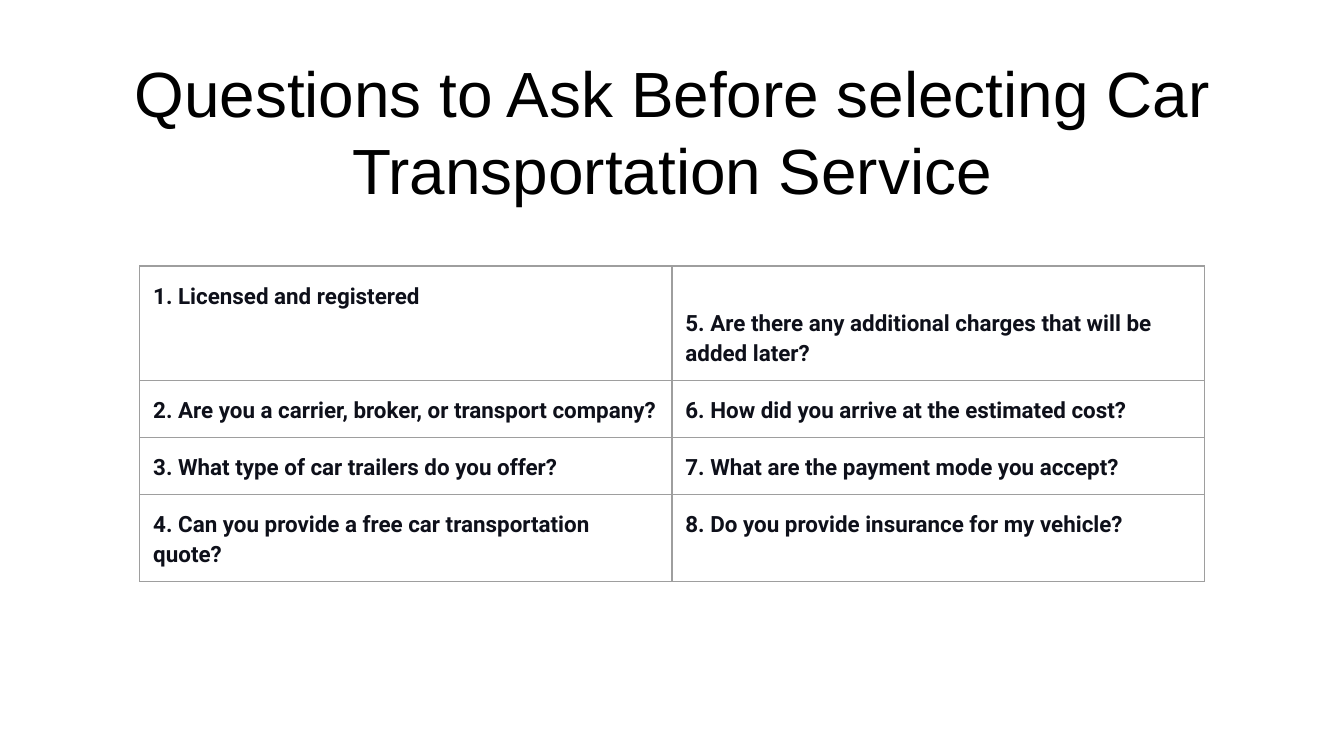
"""Build a slide listing questions to ask a car transportation service."""
from typing import NamedTuple

import lxml.etree
import pptx
import pptx.dml.color
import pptx.enum.text
import pptx.oxml.ns
import pptx.table
import pptx.text.text
import pptx.util

Inches = pptx.util.Inches
Pt = pptx.util.Pt
COLORS = {"title": "000000", "question": "0E101A", "border": "9E9E9E"}
INSET = Inches(0.1)


class QuestionRow(NamedTuple):
    height: float
    left: str
    right: str
    right_inset: float = 0.1


QUESTIONS = [
    QuestionRow(0.84, "1. Licensed and registered",
                "5. Are there any additional charges that will be added later?", 0.3),
    QuestionRow(0.42, "2. Are you a carrier, broker, or transport company?",
                "6. How did you arrive at the estimated cost?"),
    QuestionRow(0.42, "3. What type of car trailers do you offer?",
                "7. What are the payment mode you accept?"),
    QuestionRow(0.65, "4. Can you provide a free car transportation quote?",
                "8. Do you provide insurance for my vehicle?"),
]


def style_font(font: pptx.text.text.Font, name: str, size: float, color: str) -> None:
    font.name = name
    font.size = Pt(size)
    font.color.rgb = pptx.dml.color.RGBColor.from_string(COLORS[color])


def add_borders(cell: pptx.table._Cell) -> None:
    properties = cell._tc.get_or_add_tcPr()
    qn = pptx.oxml.ns.qn
    for position, side in enumerate(("a:lnL", "a:lnR", "a:lnT", "a:lnB")):
        border = lxml.etree.Element(qn(side), w=str(Pt(0.75)))
        fill = lxml.etree.SubElement(border, qn("a:solidFill"))
        lxml.etree.SubElement(fill, qn("a:srgbClr"), val=COLORS["border"])
        properties.insert(position, border)


def fill_question(cell: pptx.table._Cell, question: str, top_inset: float) -> None:
    cell.text = question
    cell.margin_left = cell.margin_right = cell.margin_bottom = INSET
    cell.margin_top = Inches(top_inset)
    cell.fill.background()
    paragraph = cell.text_frame.paragraphs[0]
    paragraph.line_spacing = 1.15
    paragraph.font.bold = True
    style_font(paragraph.font, "Roboto", 12, "question")
    add_borders(cell)


def main() -> None:
    presentation = pptx.Presentation()
    presentation.slide_width = Inches(10)
    presentation.slide_height = Inches(10 * 9 / 16)
    slide = presentation.slides.add_slide(presentation.slide_layouts[0])
    subtitle = slide.placeholders[1].element
    subtitle.getparent().remove(subtitle)

    title = slide.shapes.title
    title.left, title.top = Inches(0.34), Inches(0.81)
    title.width, title.height = Inches(9.32), Inches(0.83)
    frame = title.text_frame
    frame.text = "Questions to Ask Before selecting Car Transportation Service"
    frame.word_wrap = True
    frame.auto_size = pptx.enum.text.MSO_AUTO_SIZE.NONE
    frame.vertical_anchor = pptx.enum.text.MSO_ANCHOR.BOTTOM
    frame.margin_left = frame.margin_right = INSET
    frame.margin_top = frame.margin_bottom = INSET
    heading = frame.paragraphs[0]
    heading.alignment = pptx.enum.text.PP_ALIGN.CENTER
    heading.line_spacing = 1.0
    style_font(heading.font, "Arial", 34.2, "title")

    height = sum(row.height for row in QUESTIONS)
    table = slide.shapes.add_table(
        len(QUESTIONS), 2, Inches(1.04), Inches(1.98), Inches(7.92), Inches(height)
    ).table
    table.first_row = table.horz_banding = False
    for index, row in enumerate(QUESTIONS):
        table.rows[index].height = Inches(row.height)
        fill_question(table.cell(index, 0), row.left, 0.1)
        fill_question(table.cell(index, 1), row.right, row.right_inset)

    presentation.save("out.pptx")


if __name__ == "__main__":
    main()
